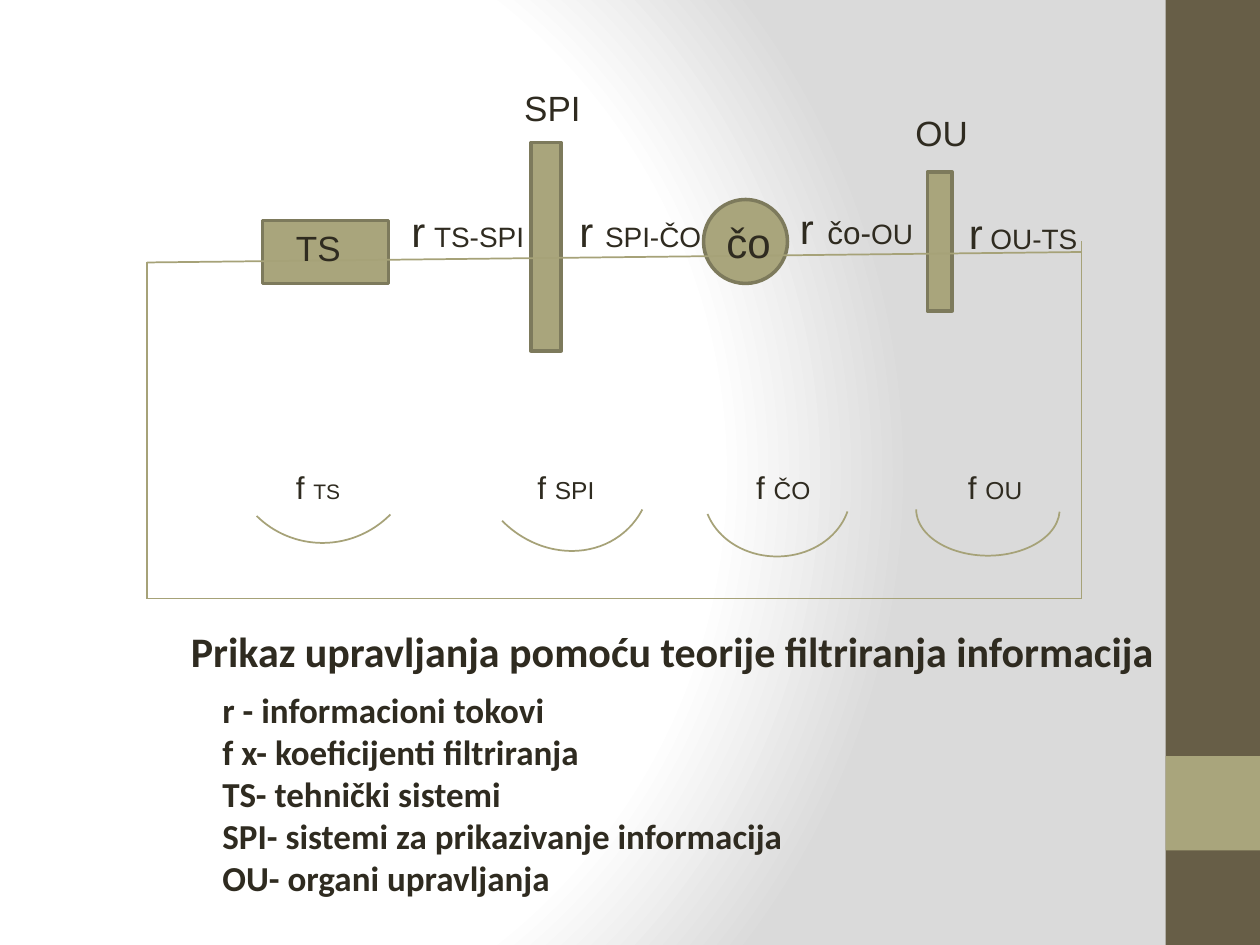
import pptx
import pptx.dml.color
import pptx.enum.shapes
import pptx.oxml
import pptx.oxml.ns
import pptx.util
from lxml import etree

Pt = pptx.util.Pt
MSO = pptx.enum.shapes.MSO_SHAPE
INK, OLIVE, EDGE, LINE, BROWN = "2F2B20", "A9A57C", "7D7A5C", "A6A278", "675E47"


def rgb(value):
    return pptx.dml.color.RGBColor.from_string(value)


def set_background(s):
    stops = "".join(
        f'<a:gs pos="{pos * 1000}"><a:srgbClr val="{color}"/></a:gs>'
        for pos, color in ((0, "FFFFFF"), (75, "FFFFFF"), (100, "DADADA"))
    )
    s.background.fill.solid()
    bg = s.element.find(".//" + pptx.oxml.ns.qn("p:bgPr"))
    bg.remove(bg[0])
    bg.insert(0, pptx.oxml.parse_xml(
        f'<a:gradFill {pptx.oxml.ns.nsdecls("a")} rotWithShape="1"><a:gsLst>{stops}</a:gsLst>'
        '<a:path path="circle"><a:fillToRect l="20000" t="50000" r="100000" b="50000"/></a:path>'
        '</a:gradFill>'
    ))


def add_shape(s, kind, box, fill=None, line=None, width=1, rotation=0, adjustments=()):
    sp = s.shapes.add_shape(kind, *map(Pt, box))
    sp.shadow.inherit = False
    sp.rotation = rotation
    for i, value in enumerate(adjustments):
        sp.adjustments[i] = value
    if fill:
        sp.fill.solid()
        sp.fill.fore_color.rgb = rgb(fill)
    else:
        sp.fill.background()
    if line:
        sp.line.color.rgb = rgb(line)
        sp.line.width = Pt(width)
    else:
        sp.line.fill.background()


def add_line(s, start, end):
    c = s.shapes.add_connector(
        pptx.enum.shapes.MSO_CONNECTOR.STRAIGHT, *map(Pt, start + end))
    c.line.color.rgb = rgb(LINE)
    c.line.width = Pt(1)
    etree.SubElement(c.element.spPr, pptx.oxml.ns.qn("a:effectLst"))


def add_text(s, box, paragraphs, font="Arial", bold=False, wrap=True):
    tf = s.shapes.add_textbox(*map(Pt, box)).text_frame
    tf.word_wrap = wrap
    for i, runs in enumerate(paragraphs):
        p = tf.add_paragraph() if i else tf.paragraphs[0]
        p.font.name = font
        p.font.bold = bold
        p.font.color.rgb = rgb(INK)
        p.font.size = Pt(runs[0][1])
        for text, size in runs:
            r = p.add_run()
            r.text = text
            if size != runs[0][1]:
                r.font.size = Pt(size)


def add_diagram(s):
    add_shape(s, MSO.RECTANGLE, (150, 126, 72, 36), OLIVE, EDGE, 2)
    add_shape(s, MSO.MATH_MINUS, (231, 111, 162, 60), OLIVE, EDGE, 2, 90, [0.286])
    add_shape(s, MSO.MATH_MINUS, (483, 123, 108, 30), OLIVE, EDGE, 2, 90, [0.476])
    add_shape(s, MSO.OVAL, (402, 114, 48, 48), OLIVE, EDGE, 2)

    left, right, bottom = 84, 618, 342
    add_line(s, (left, 150), (right, 144))
    add_line(s, (left, 150), (left, bottom))
    add_line(s, (left, bottom), (right, bottom))
    add_line(s, (right, bottom), (right, 138))

    for box, rotation, adjustments in (
        ((130.5, 202.5, 108.5, 107.5), 134.6, ()),
        ((273, 210, 96.5, 107.5), 135.5, (153.24, 0)),
        ((402, 246, 84, 72), 180, (116.6, 206.15)),
        ((523.5, 264.5, 82, 53), 180, (109.15, 0)),
    ):
        add_shape(s, MSO.ARC, box, line=LINE, rotation=rotation, adjustments=adjustments)


def add_labels(s):
    for left, name, size in ((162, "TS", 12), (300, "SPI", 14), (425, "ČO", 14), (546, "OU", 14)):
        add_text(s, (left, 264, 54, 29), [[("f ", 18), (name, size)]])

    for box, name, size in (
        ((408, 120, 42, 36.5), "čo", 24),
        ((516, 60, 66, 31.5), "OU", 20),
        ((292.5, 46, 47, 31.5), "SPI", 20),
        ((162, 126, 54, 31.5), "TS", 20),
    ):
        add_text(s, box, [[(name, size)]], wrap=name != "SPI")

    for box, runs in (
        ((228, 114, 84, 36.5), [("r", 24), (" ", 18), ("TS-SPI", 16)]),
        ((324, 114, 90, 58), [("r ", 24), ("SPI-ČO", 16)]),
        ((450, 108, 104.5, 41), [("r", 24), (" ", 28), ("čo-", 18), ("OU", 16)]),
        ((546.5, 115, 98.5, 36.5), [("r", 24), (" OU-TS", 16)]),
    ):
        add_text(s, box, [runs])


def add_legend(s):
    caption = "Prikaz upravljanja pomoću teorije filtriranja informacija"
    add_text(s, (102, 354, 578, 36), [[(caption, 24)]], "Calibri", True)
    items = (
        "r - informacioni tokovi",
        "f x- koeficijenti filtriranja",
        "TS- tehnički sistemi",
        "SPI- sistemi za prikazivanje informacija",
        "OU- organi upravljanja",
    )
    add_text(s, (120, 390, 456, 128), [[(item, 20)] for item in items], "Calibri", True)


def main():
    prs = pptx.Presentation()
    prs.slide_width, prs.slide_height = Pt(720), Pt(540)
    s = prs.slides.add_slide(prs.slide_layouts[6])
    set_background(s)
    add_shape(s, MSO.RECTANGLE, (666, 0, 54, 540), BROWN)
    add_shape(s, MSO.RECTANGLE, (666, 432, 54, 54), OLIVE)
    add_diagram(s)
    add_labels(s)
    add_legend(s)
    prs.save("out.pptx")


if __name__ == "__main__":
    main()
